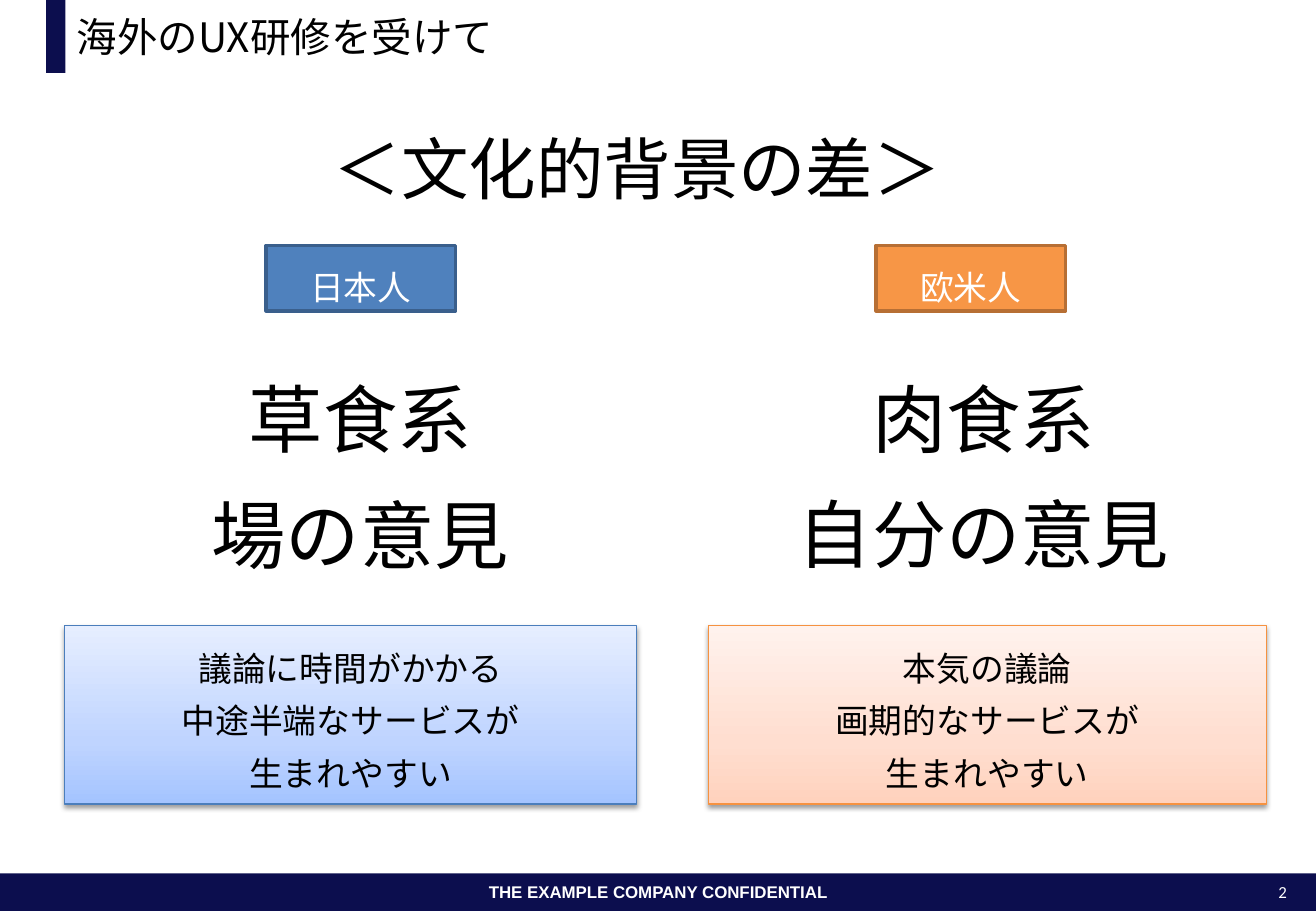
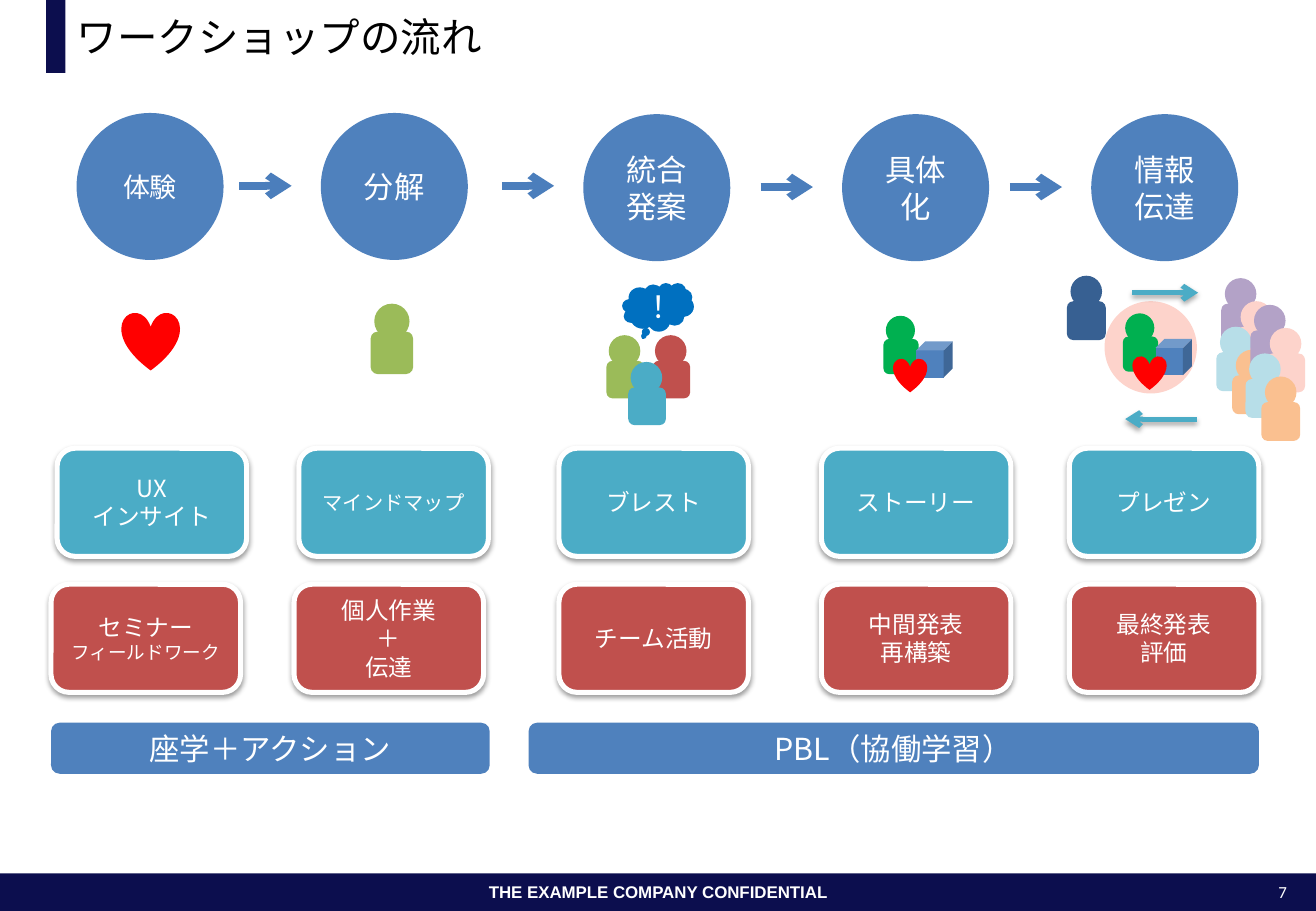
"""Build two slides: cultural differences and the workshop flow."""
import copy
from dataclasses import dataclass, replace
from typing import Any, NamedTuple, Optional

import lxml.etree
import pptx
import pptx.dml.color
import pptx.enum.shapes
import pptx.enum.text
import pptx.oxml.ns
import pptx.util

PX = 9144
SHAPE = pptx.enum.shapes.MSO_SHAPE
ALIGN = pptx.enum.text.PP_ALIGN
ANCHOR = pptx.enum.text.MSO_ANCHOR
qn = pptx.oxml.ns.qn


@dataclass(frozen=True)
class Theme:
    font: str = "Noto Sans CJK JP"
    footer_font: str = "Arial"
    number_font: str = "Calibri"
    navy: str = "0C0E4E"
    white: str = "FFFFFF"
    black: str = "000000"
    blue: str = "4F81BD"
    blue_line: str = "4B7EBC"
    blue_edge: str = "3A5F8C"
    dark_blue: str = "376092"
    cloud: str = "0070C0"
    orange: str = "F79646"
    orange_line: str = "F69240"
    orange_edge: str = "B76F34"
    teal: str = "4BACC6"
    brick: str = "C0504D"
    olive: str = "9BBB59"
    green: str = "00B050"
    red: str = "FF0000"
    pink: str = "FDD3CB"
    crowd: tuple[str, ...] = ("B3A2C7", "FDD3CB", "B7DEE8", "FAC090")
    blue_fade: tuple[str, ...] = ("A4C4FF", "BFD4FF", "E6EEFF")
    orange_fade: tuple[str, ...] = ("FFD2BD", "FFDED0", "FFF2ED")
    fade_stops: tuple[float, ...] = (0, 0.35, 1)
    small: int = 10
    minor: int = 11
    compact: int = 12
    card: int = 14
    medium: int = 16
    large: int = 18
    body: int = 20
    title: int = 24
    heading: int = 40
    key: int = 44


T = Theme()


class Box(NamedTuple):
    x: int
    y: int
    w: int
    h: int


class Line(NamedTuple):
    color: str
    width: float


class Shadow(NamedTuple):
    opacity: int
    distance: float


@dataclass(frozen=True)
class Label:
    text: str
    size: int
    color: str = T.white
    sub_size: Optional[int] = None
    font: str = T.font
    bold: bool = False
    align: Any = ALIGN.CENTER
    anchor: Any = ANCHOR.MIDDLE
    spacing: Optional[float] = None
    inset: tuple[int, int] = (10, 5)
    wrap: bool = True


@dataclass(frozen=True)
class Culture:
    people: str
    x: int
    tag_x: int
    traits: tuple[tuple[str, int], ...]
    result: str
    result_x: int
    result_w: int
    fill: str
    edge: str
    fade: tuple[str, ...]
    fade_line: str


@dataclass(frozen=True)
class Step:
    name: str
    name_size: int
    x: int
    y: int
    tool: str
    tool_size: int
    tool_x: int
    task: str
    task_x: int
    task_sub: Optional[int] = None


CARD_SHADOW = Shadow(38, 1.6)
ARROW_SHADOW = Shadow(35, 1.8)
LOOSE = Label("", T.body, anchor=ANCHOR.TOP, spacing=1.3, inset=(12, 8))

CULTURES = (
    Culture("日本人", 131, 219, (("草食系", 277), ("場の意見", 373)),
            "議論に時間がかかる\n中途半端なサービスが\n生まれやすい", 53, 471,
            T.blue, T.blue_edge, T.blue_fade, T.blue_line),
    Culture("欧米人", 644, 721, (("肉食系", 277), ("自分の意見", 372)),
            "本気の議論\n画期的なサービスが\n生まれやすい", 583, 459,
            T.orange, T.orange_edge, T.orange_fade, T.orange_line),
)

STEPS = (
    Step("体験", T.medium, 63, 93, "UX\nインサイト", T.card, 47,
         "セミナー\nフィールドワーク", 42, T.minor),
    Step("分解", T.large, 264, 93, "マインドマップ", T.compact, 246,
         "個人作業\n＋\n伝達", 242),
    Step("統合発案", T.large, 480, 94, "ブレスト", T.card, 460, "チーム活動", 460),
    Step("具体化", T.large, 693, 94, "ストーリー", T.card, 676, "中間発表\n再構築", 676),
    Step("情報\n伝達", T.large, 898, 94, "プレゼン", T.card, 880, "最終発表\n評価", 880),
)


def rgb(color: str) -> pptx.dml.color.RGBColor:
    """Turn a hex string into a colour."""
    return pptx.dml.color.RGBColor.from_string(color)


def emu(*lengths: int) -> list[pptx.util.Emu]:
    """Turn px lengths into EMU."""
    return [pptx.util.Emu(length * PX) for length in lengths]


def write(sp: Any, label: Label) -> None:
    """Put a label into a shape and format its runs."""
    tf = sp.text_frame
    tf.text = label.text
    tf.auto_size = pptx.enum.text.MSO_AUTO_SIZE.NONE
    tf.word_wrap = label.wrap
    tf.vertical_anchor = label.anchor
    tf.margin_left, tf.margin_top = emu(*label.inset)
    tf.margin_right, tf.margin_bottom = emu(*label.inset)
    for i, p in enumerate(tf.paragraphs):
        p.alignment = label.align
        p.line_spacing = label.spacing
        for r in p.runs:
            r.font.size = pptx.util.Pt(label.sub_size if i and label.sub_size else label.size)
            r.font.bold = label.bold
            r.font.color.rgb = rgb(label.color)
            r.font.name = label.font
            lxml.etree.SubElement(r.font._element, qn("a:ea"), typeface=label.font)


def cast(effects: Any, shadow: Shadow) -> None:
    """Add a soft downward shadow to an effect list."""
    outer = lxml.etree.SubElement(
        effects, qn("a:outerShdw"), blurRad=str(pptx.util.Pt(3.1)),
        dist=str(pptx.util.Pt(shadow.distance)), dir="5400000", rotWithShape="0")
    color = lxml.etree.SubElement(outer, qn("a:srgbClr"), val=T.black)
    lxml.etree.SubElement(color, qn("a:alpha"), val=str(shadow.opacity * 1000))


def draw(shapes: Any, kind: Any, box: Box, fill: str, label: Optional[Label] = None,
         line: Optional[Line] = None, shadow: Optional[Shadow] = None) -> Any:
    """Draw a filled preset shape."""
    sp = shapes.add_shape(kind, *emu(*box))
    sp.fill.solid()
    sp.fill.fore_color.rgb = rgb(fill)
    if line:
        sp.line.color.rgb = rgb(line.color)
        sp.line.width = pptx.util.Pt(line.width)
    else:
        sp.line.fill.background()
    sp.shadow.inherit = False
    if shadow:
        cast(sp.element.spPr.find(qn("a:effectLst")), shadow)
    if label:
        write(sp, label)
    return sp


def fade(sp: Any, colors: tuple[str, ...]) -> None:
    """Fill a shape with an upward three-stop gradient."""
    sp.fill.gradient()
    sp.fill.gradient_angle = 90
    stops = sp.element.spPr.find(qn("a:gradFill")).find(qn("a:gsLst"))
    stops.insert(1, copy.deepcopy(stops[0]))
    for stop, color, position in zip(sp.fill.gradient_stops, colors, T.fade_stops):
        stop.color.rgb = rgb(color)
        stop.position = position


def add_text(shapes: Any, box: Box, label: Label) -> None:
    """Add a text box."""
    write(shapes.add_textbox(*emu(*box)), label)


def arrow(shapes: Any, x1: int, x2: int, y: int, line: Line,
          shadow: Optional[Shadow] = None) -> None:
    """Draw a horizontal arrow from x1 to x2."""
    sp = shapes.add_connector(pptx.enum.shapes.MSO_CONNECTOR.STRAIGHT, *emu(x1, y, x2, y))
    sp.line.color.rgb = rgb(line.color)
    sp.line.width = pptx.util.Pt(line.width)
    lxml.etree.SubElement(sp.element.spPr.find(qn("a:ln")), qn("a:tailEnd"), type="arrow")
    effects = lxml.etree.SubElement(sp.element.spPr, qn("a:effectLst"))
    if shadow:
        cast(effects, shadow)


def person(shapes: Any, x: int, y: int, size: int, color: str) -> None:
    """Draw a round head on a square body."""
    head = round(size * 0.825)
    draw(shapes, SHAPE.OVAL, Box(x + (size - head) // 2, y, head, head), color)
    draw(shapes, SHAPE.ROUNDED_RECTANGLE, Box(x, y + round(size * 0.67), size, size), color)


def story(shapes: Any, x: int, y: int) -> None:
    """Draw a person holding a cube and a heart."""
    person(shapes, x, y, 29, T.green)
    draw(shapes, SHAPE.CUBE, Box(x + 27, y + 21, 30, 30), T.blue)
    draw(shapes, SHAPE.HEART, Box(x + 8, y + 35, 28, 28), T.red)


def add_slide(prs: Any, title: str, number: str) -> Any:
    """Add a slide with its bands, footer and title."""
    s = prs.slides.add_slide(prs.slide_layouts[5])
    footer = Label("THE EXAMPLE COMPANY CONFIDENTIAL", T.small, font=T.footer_font,
                   bold=True, wrap=False)
    draw(s.shapes, SHAPE.RECTANGLE, Box(0, 719, 1083, 31), T.navy, footer)
    draw(s.shapes, SHAPE.RECTANGLE, Box(38, 0, 16, 60), T.navy)
    add_text(s.shapes, Box(1028, 721, 41, 27),
             Label(number, T.small, font=T.number_font, align=ALIGN.RIGHT,
                   anchor=ANCHOR.TOP, wrap=False))
    sp = s.shapes.title
    sp.left, sp.top, sp.width, sp.height = emu(53, 0, 1016, 60)
    write(sp, Label(title, T.title, T.black, align=ALIGN.LEFT))
    return s.shapes


def build_culture(prs: Any) -> None:
    """Build the comparison of two cultures."""
    shapes = add_slide(prs, "海外のUX研修を受けて", "2")
    add_text(shapes, Box(262, 100, 525, 145),
             Label("＜文化的背景の差＞", T.heading, T.black, anchor=ANCHOR.TOP, wrap=False))
    for c in CULTURES:
        draw(shapes, SHAPE.RECTANGLE, Box(c.tag_x, 202, 156, 54), c.fill,
             replace(LOOSE, text=c.people), Line(c.edge, 2))
        for trait, y in c.traits:
            add_text(shapes, Box(c.x, y, 331, 99),
                     replace(LOOSE, text=trait, size=T.key, color=T.black))
        sp = draw(shapes, SHAPE.RECTANGLE, Box(c.result_x, 515, c.result_w, 147), c.fade[0],
                  replace(LOOSE, text=c.result, color=T.black),
                  Line(c.fade_line, 0.75), CARD_SHADOW)
        fade(sp, c.fade)


def build_workshop(prs: Any) -> None:
    """Build the five-step workshop flow."""
    shapes = add_slide(prs, "ワークショップの流れ", "7")
    for i, step in enumerate(STEPS):
        draw(shapes, SHAPE.OVAL, Box(step.x, step.y, 121, 121), T.blue,
             Label(step.name, step.name_size))
        if i:
            arrow(shapes, step.x - 67, step.x - 24, STEPS[i - 1].y + 60, Line(T.blue_line, 4.5))
        tool = Label(step.tool, step.tool_size)
        task = Label(step.task, T.card, sub_size=step.task_sub)
        for x, y, fill, label in ((step.tool_x, 369, T.teal, tool),
                                  (step.task_x, 481, T.brick, task)):
            draw(shapes, SHAPE.ROUNDED_RECTANGLE, Box(x, y, 156, 89), fill, label,
                 Line(T.white, 3), CARD_SHADOW)
    for x, width, text in ((42, 361, "座学＋アクション"), (435, 601, "PBL（協働学習）")):
        draw(shapes, SHAPE.FLOWCHART_ALTERNATE_PROCESS, Box(x, 595, width, 42), T.blue,
             Label(text, T.large))

    draw(shapes, SHAPE.HEART, Box(100, 257, 48, 48), T.red)
    person(shapes.add_group_shape().shapes, 305, 250, 35, T.olive)
    team = shapes.add_group_shape().shapes
    for x, y, color in ((499, 276, T.olive), (537, 276, T.brick), (517, 298, T.teal)):
        person(team, x, y, 31, color)
    draw(shapes, SHAPE.CLOUD_CALLOUT, Box(512, 233, 59, 40), T.cloud,
         Label("！", T.large, align=ALIGN.RIGHT))
    story(shapes.add_group_shape().shapes, 727, 260)

    person(shapes.add_group_shape().shapes, 878, 227, 32, T.dark_blue)
    message = shapes.add_group_shape().shapes
    draw(message, SHAPE.OVAL, Box(909, 248, 76, 76), T.pink)
    story(message, 924, 258)
    for dx, dy in ((0, 0), (24, 22)):
        for (x, y), color in zip(((1005, 229), (1018, 248), (1001, 269), (1014, 288)), T.crowd):
            person(shapes.add_group_shape().shapes, x + dx, y + dy, 32, color)
    for x1, x2, y in ((985, 926, 345), (932, 986, 241)):
        arrow(shapes, x1, x2, y, Line(T.teal, 3), ARROW_SHADOW)


def main() -> None:
    """Build and save the presentation."""
    prs = pptx.Presentation()
    prs.slide_width, prs.slide_height = emu(1083, 750)
    build_culture(prs)
    build_workshop(prs)
    prs.save("out.pptx")


if __name__ == "__main__":
    main()
